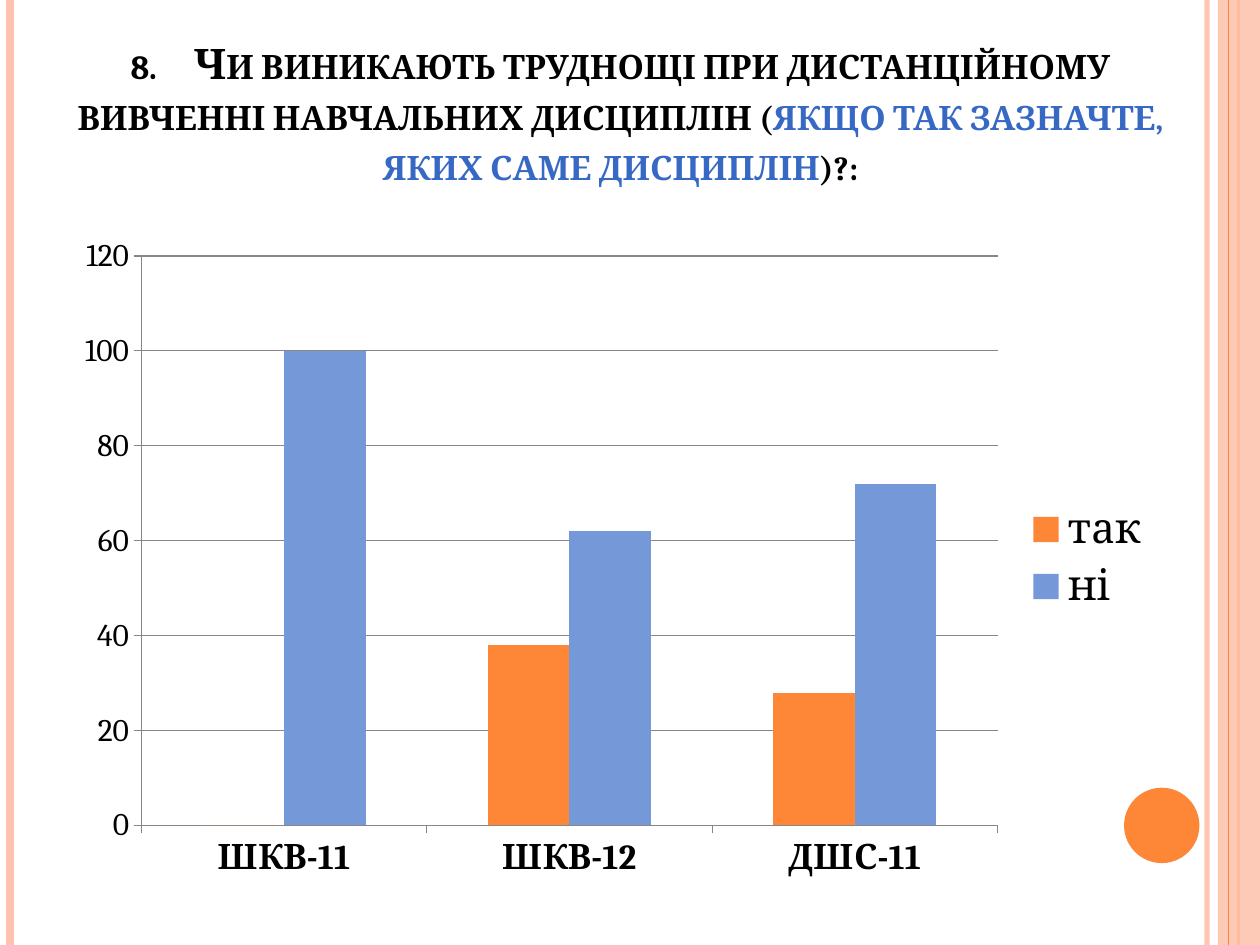
from lxml import etree
from pptx import Presentation
from pptx import util as u
from pptx.chart.data import CategoryChartData
from pptx.dml.color import RGBColor
from pptx.enum import chart as ch, shapes, text
from pptx.oxml.ns import qn

BLACK = RGBColor(0, 0, 0)
ORANGE = RGBColor(0xFE, 0x86, 0x37)
PEACH = RGBColor(0xFE, 0xC3, 0xAE)
BLUE = RGBColor(0x36, 0x68, 0xC4)
SKY = RGBColor(0x75, 0x98, 0xD9)
GRAY = RGBColor(0x87, 0x87, 0x87)
FONT = "Cambria"
WIDE, HIGH = 25.4, 19.05

TITLE = [
    ("8.\tЧи виникають труднощі при дистанційному вивченні навчальних дисциплін (", BLACK),
    ("якщо так зазначте, яких саме дисциплін", BLUE),
    (")?:", BLACK),
]
GROUPS = ["ШКВ-11", "ШКВ-12", "ДШС-11"]
SERIES = [("так", [0, 38, 28], ORANGE), ("ні", [100, 62, 72], SKY)]
# x in cm, colour, width in points, opacity in percent
BACK = [(24.33, PEACH, 3, 93), (0.2, PEACH, 4.5, 100), (24.97, ORANGE, 1.5, 100)]
FRONT = [(24.77, ORANGE, 0.75, 100)]


def box(*sides):
    return [u.Cm(side) for side in sides]


def style(font, **form):
    for key, val in {"name": FONT, **form}.items():
        setattr(font, key, val)
    font.color.rgb = form.get("color_rgb", BLACK)


def fade(node, part):
    """Set the opacity of the solid colour found under node."""
    if part < 100:
        tint = next(node.iter(qn("a:srgbClr")))
        etree.SubElement(tint, qn("a:alpha")).set("val", str(part * 1000))


def stripes(slide, rows):
    for x, tone, width, part in rows:
        line = slide.shapes.add_connector(
            shapes.MSO_CONNECTOR.STRAIGHT, *box(x, 0, x, HIGH))
        line.line.color.rgb = tone
        line.line.width = u.Pt(width)
        props = line._element.spPr
        fade(props, part)
        etree.SubElement(props, qn("a:effectLst"))


def plain(slide, kind, place, tone, part=100):
    shape = slide.shapes.add_shape(kind, *box(*place))
    shape.shadow.inherit = False
    shape.fill.solid()
    shape.fill.fore_color.rgb = tone
    shape.line.fill.background()
    fade(shape._element.spPr, part)


def title(slide):
    frame = slide.shapes.add_textbox(*box(0.71, 0.76, 23.6, 3.18)).text_frame
    frame.word_wrap = True
    frame.vertical_anchor = text.MSO_ANCHOR.BOTTOM
    para = frame.paragraphs[0]
    para.alignment = text.PP_ALIGN.CENTER
    para.line_spacing = u.Pt(29)
    for words, tone in TITLE:
        run = para.add_run()
        run.text = words
        style(run.font, size=u.Pt(24), bold=True)
        run.font.color.rgb = tone
        run._r.get_or_add_rPr().set("cap", "small")


def graph(slide):
    data = CategoryChartData()
    data.categories = GROUPS
    for name, vals, _ in SERIES:
        data.add_series(name, vals)
    chart = slide.shapes.add_chart(
        ch.XL_CHART_TYPE.COLUMN_CLUSTERED, *box(1.27, 4.52, 22.23, 13.46), data).chart
    chart.has_title = False
    style(chart.font, size=u.Pt(18))

    plot = chart.plots[0]
    plot.gap_width = 150
    plot.overlap = 0
    plot.vary_by_categories = False
    for bars, (_, _, tone) in zip(plot.series, SERIES):
        bars.format.fill.solid()
        bars.format.fill.fore_color.rgb = tone

    cats, vals = chart.category_axis, chart.value_axis
    vals.has_major_gridlines = True
    vals.minimum_scale, vals.maximum_scale, vals.major_unit = 0, 120, 20
    for axis in (cats, vals):
        axis.major_tick_mark = ch.XL_TICK_MARK.OUTSIDE
        axis.minor_tick_mark = ch.XL_TICK_MARK.NONE
    for part in (cats, vals, vals.major_gridlines):
        part.format.line.color.rgb = GRAY
        part.format.line.width = u.Pt(0.75)
    style(cats.tick_labels.font, size=u.Pt(20), bold=True)
    style(vals.tick_labels.font, size=u.Pt(18))

    chart.has_legend = True
    chart.legend.position = ch.XL_LEGEND_POSITION.RIGHT
    chart.legend.include_in_layout = False
    style(chart.legend.font, size=u.Pt(24))


def main():
    deck = Presentation()
    deck.slide_width, deck.slide_height = box(WIDE, HIGH)
    slide = deck.slides.add_slide(deck.slide_layouts[6])
    stripes(slide, BACK)
    plain(slide, shapes.MSO_SHAPE.RECTANGLE, (24.55, 0, 0.85, HIGH), PEACH, 87)
    stripes(slide, FRONT)
    plain(slide, shapes.MSO_SHAPE.OVAL, (22.66, 15.88, 1.52, 1.52), ORANGE)
    title(slide)
    graph(slide)
    deck.save("out.pptx")


if __name__ == "__main__":
    main()
